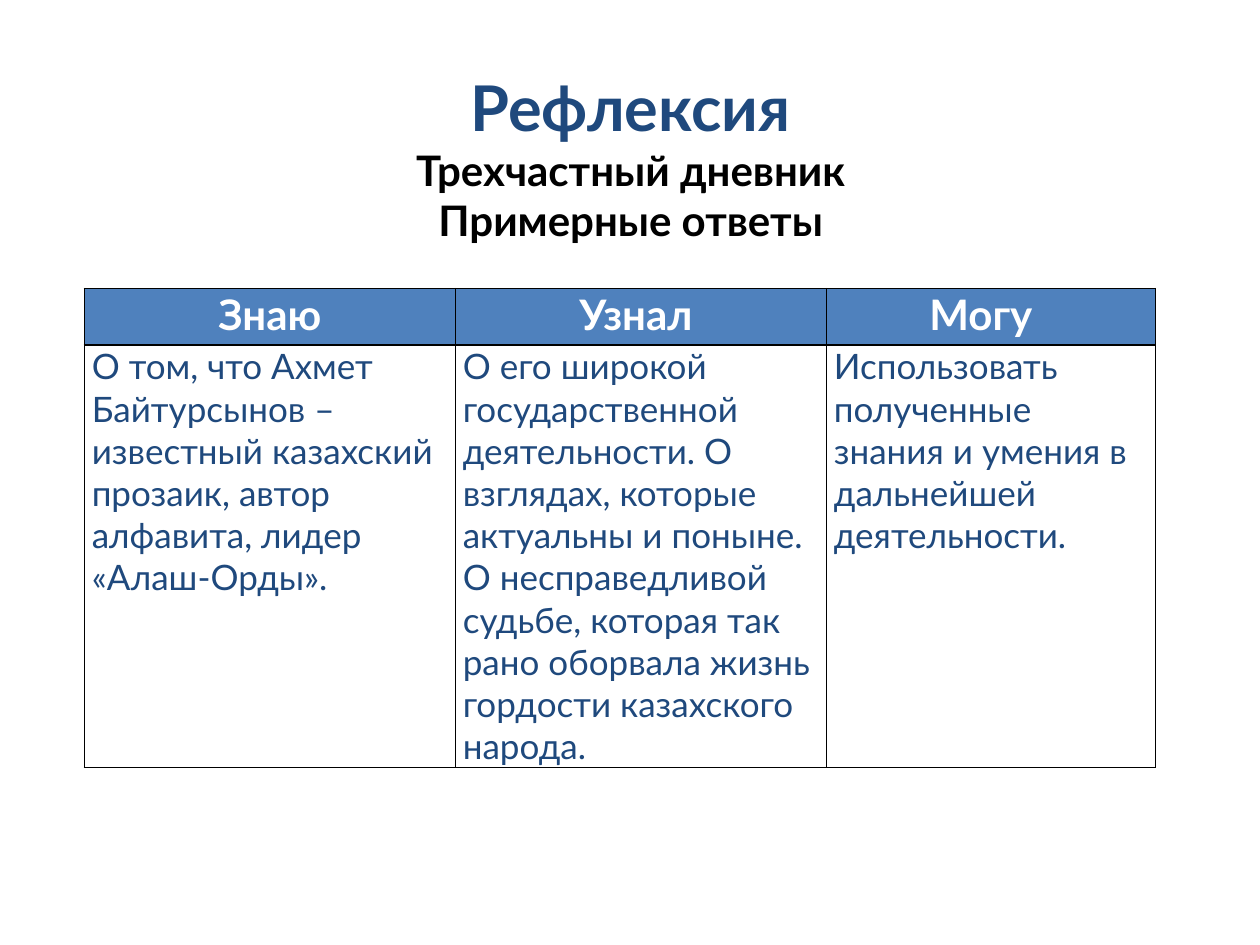
import pptx
import pptx.dml.color
import pptx.enum.text
import pptx.oxml.ns
import pptx.util
from lxml import etree

Cm = pptx.util.Cm
Pt = pptx.util.Pt
RGBColor = pptx.dml.color.RGBColor
qn = pptx.oxml.ns.qn
CENTER = pptx.enum.text.PP_ALIGN.CENTER
LEFT = pptx.enum.text.PP_ALIGN.LEFT

NAVY = RGBColor(0x1F, 0x49, 0x7D)
BLUE = RGBColor(0x4F, 0x81, 0xBD)
BLACK = RGBColor(0x00, 0x00, 0x00)
WHITE = RGBColor(0xFF, 0xFF, 0xFF)

TITLE_LINES = [
    ("Рефлексия", 36, NAVY),
    ("Трехчастный дневник", 24, BLACK),
    ("Примерные ответы", 24, BLACK),
]
# Each column of the diary: heading, answer, width in cm
DIARY = [
    ("Знаю", "О том, что Ахмет Байтурсынов – известный казахский прозаик, "
     "автор алфавита, лидер «Алаш-Орды».", 7.48),
    ("Узнал", "О его широкой государственной деятельности. О взглядах, которые "
     "актуальны и поныне. О несправедливой судьбе, которая так рано оборвала "
     "жизнь гордости казахского народа.", 7.48),
    ("Могу", "Использовать полученные знания и умения в дальнейшей "
     "деятельности.", 6.63),
]


class SlideBuilder:
    """Holds the style and the current slide."""

    font = "Lato"
    inset = 0.15
    heading_shift = 0.2

    def __init__(self, page):
        self.page = page

    def style(self, span, size, color, bold):
        span.font.name = self.font
        span.font.size = Pt(size)
        span.font.color.rgb = color
        span.font.bold = bold

    def title(self, lines, left, top, width, height):
        box = self.page.shapes.title
        box.left, box.top = Cm(left), Cm(top)
        box.width, box.height = Cm(width), Cm(height)
        frame = box.text_frame
        frame.auto_size = pptx.enum.text.MSO_AUTO_SIZE.NONE
        frame.vertical_anchor = pptx.enum.text.MSO_ANCHOR.MIDDLE
        para = frame.paragraphs[0]
        para.text = "\v".join(text for text, size, color in lines)
        para.alignment = CENTER
        for span, (text, size, color) in zip(para.runs, lines):
            self.style(span, size, color, True)
        # Line breaks take the size of the line they end
        breaks = box.element.iter(qn("a:br"))
        for line_break, (text, size, color) in zip(breaks, lines):
            etree.SubElement(line_break, qn("a:rPr"), sz=str(size * 100))

    def cell(self, cell, text, size, color, bold, align, fill=None, shift=0):
        cell.margin_left = Cm(self.inset)
        cell.margin_right = Cm(self.inset + shift)
        cell.margin_top = cell.margin_bottom = 0
        cell.text_frame.text = text
        para = cell.text_frame.paragraphs[0]
        para.alignment = align
        self.style(para.runs[0], size, color, bold)
        self.borders(cell)
        if fill is None:
            cell.fill.background()
        else:
            cell.fill.solid()
            cell.fill.fore_color.rgb = fill

    def borders(self, cell):
        properties = cell._tc.get_or_add_tcPr()
        for side in ("a:lnL", "a:lnR", "a:lnT", "a:lnB"):
            line = etree.SubElement(properties, qn(side), w=str(Pt(1)))
            solid = etree.SubElement(line, qn("a:solidFill"))
            etree.SubElement(solid, qn("a:srgbClr"), val=str(BLACK))

    def table(self, columns, left, top, row_heights):
        total = sum(width for heading, answer, width in columns)
        table = self.page.shapes.add_table(
            len(row_heights), len(columns), Cm(left), Cm(top),
            Cm(total), Cm(sum(row_heights))).table
        for row, height in zip(table.rows, row_heights):
            row.height = Cm(height)
        for index, (heading, answer, width) in enumerate(columns):
            table.columns[index].width = Cm(width)
            # Headings sit a little further left in each column
            self.cell(table.cell(0, index), heading, 24, WHITE, True, CENTER,
                      BLUE, index * self.heading_shift)
            self.cell(table.cell(1, index), answer, 20, NAVY, False, LEFT)


def main():
    deck = pptx.Presentation()
    deck.slide_width, deck.slide_height = Cm(25.4), Cm(19.05)
    builder = SlideBuilder(deck.slides.add_slide(deck.slide_layouts[5]))

    # Title
    builder.title(TITLE_LINES, 2.77, 1.27, 19.89, 3.78)

    # Three-part diary
    builder.table(DIARY, 1.7, 5.82, (1.14, 8.49))

    deck.save("out.pptx")


if __name__ == "__main__":
    main()
